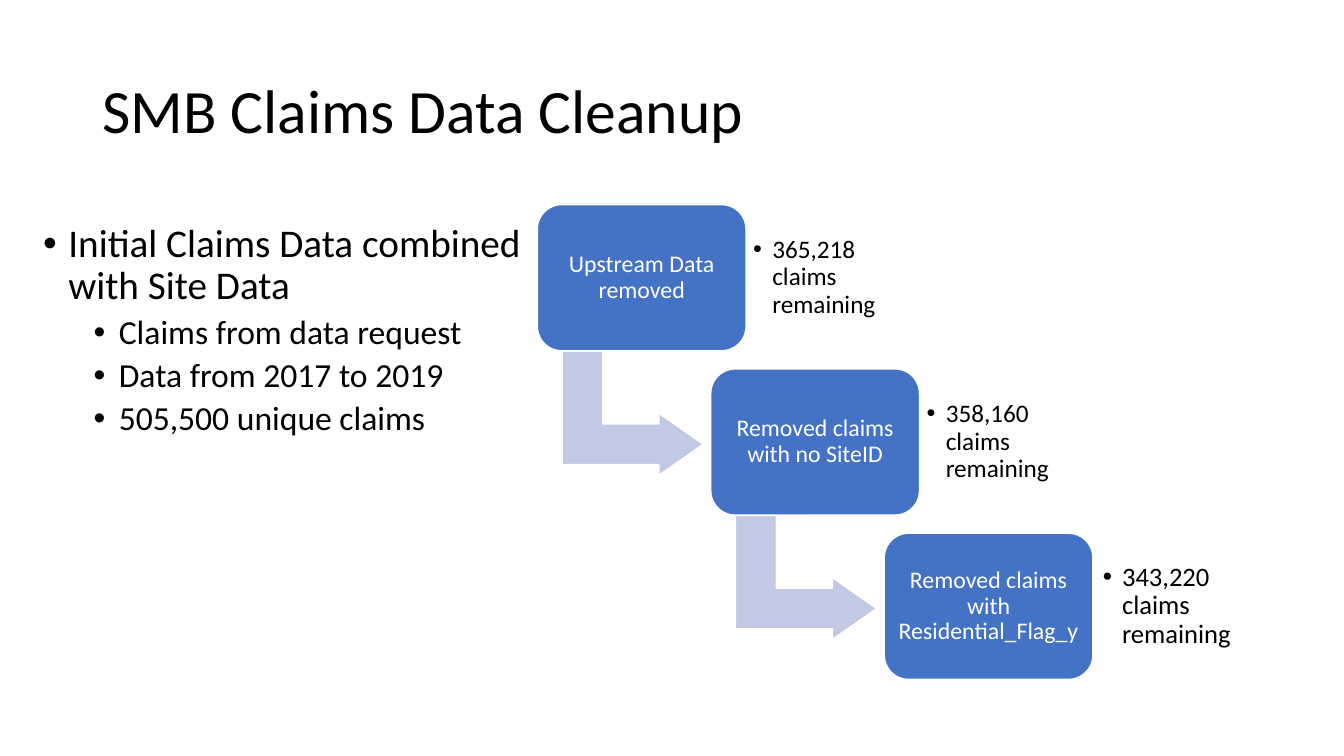
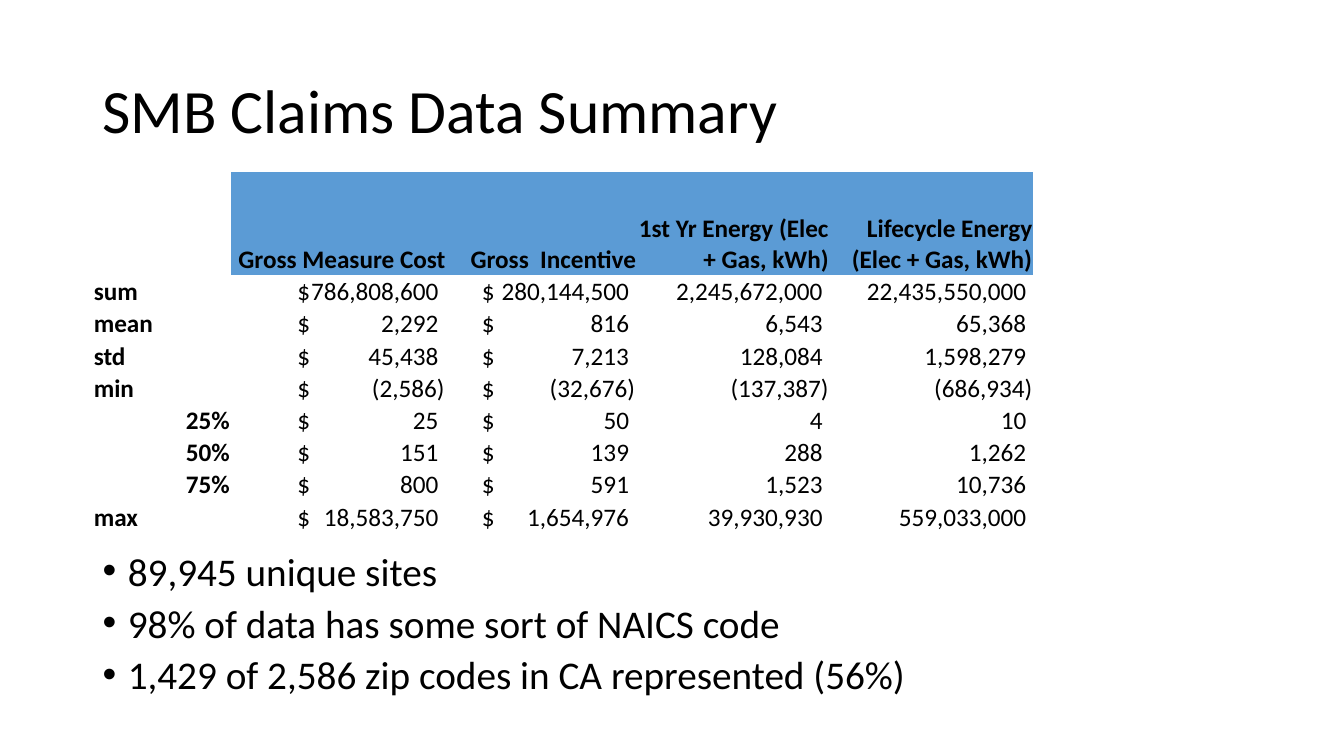
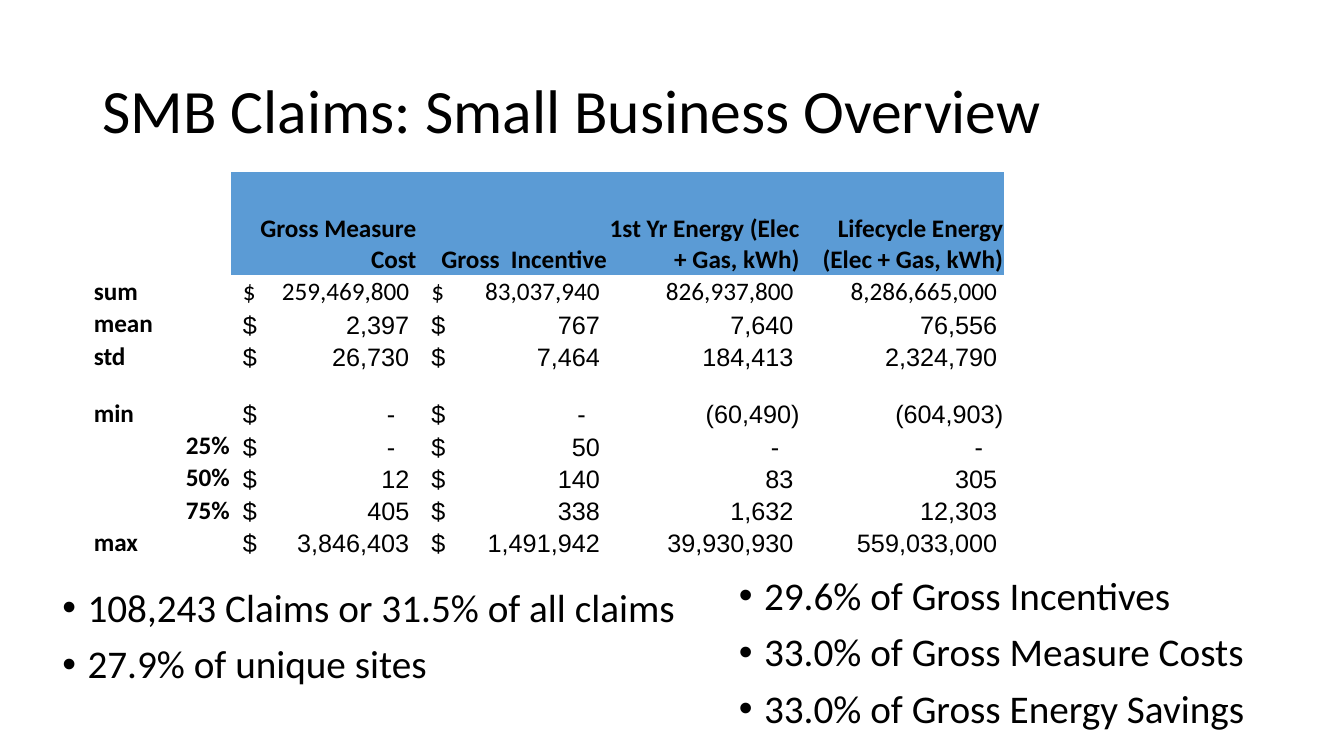
from lxml.etree import SubElement
from pptx import Presentation
from pptx.dml.color import RGBColor
from pptx.enum.shapes import MSO_SHAPE
from pptx.enum.text import MSO_ANCHOR, MSO_AUTO_SIZE, PP_ALIGN
from pptx.oxml.ns import qn
from pptx.util import Inches, Pt

BLACK = RGBColor(0x00, 0x00, 0x00)
WHITE = RGBColor(0xFF, 0xFF, 0xFF)
BLUE = RGBColor(0x44, 0x72, 0xC4)
PALE = RGBColor(0xC1, 0xC9, 0xE4)
HEAD = RGBColor(0x5B, 0x9B, 0xD5)
PLAIN = "{2D5ABB26-0587-4C30-8999-92F81FD0307C}"


def put(frame, text, size=18, face="Calibri", color=BLACK, bold=False,
        align=PP_ALIGN.LEFT, line=0.9, before=0, left=0, hang=0, tab=0):
    para = frame.paragraphs[0]
    if para.runs:
        para = frame.add_paragraph()
    para.alignment = align
    para.line_spacing = line
    para.space_before = Pt(before)
    props = para._p.get_or_add_pPr()
    if hang:
        props.set("marL", str(Inches(left)))
        props.set("indent", str(-Inches(hang)))
        SubElement(props, qn("a:buFont"), typeface="Arial")
        SubElement(props, qn("a:buChar"), char="•")
    if tab:
        stops = SubElement(props, qn("a:tabLst"))
        SubElement(stops, qn("a:tab"), pos=str(Inches(tab)), algn="r")
    run = para.add_run()
    run.text = text
    font = run.font
    font.name, font.size, font.bold = face, Pt(size), bold
    font.color.rgb = color


def box(slide, left, top, width, height, anchor=MSO_ANCHOR.TOP, pad=None):
    area = slide.shapes.add_textbox(Inches(left), Inches(top), Inches(width), Inches(height))
    frame = area.text_frame
    frame.word_wrap = True
    frame.auto_size = MSO_AUTO_SIZE.NONE
    frame.vertical_anchor = anchor
    if pad:
        frame.margin_left = frame.margin_right = Inches(pad)
        frame.margin_top = frame.margin_bottom = Inches(pad)
    return frame


deck = Presentation()
deck.slide_width, deck.slide_height = Inches(13.33), Inches(7.5)
slides = []
for title in ("SMB Claims Data Cleanup", "SMB Claims Data Summary",
              "SMB Claims: Small Business Overview"):
    slide = deck.slides.add_slide(deck.slide_layouts[6])
    put(box(slide, 0.92, 0.4, 11.5, 1.45, MSO_ANCHOR.MIDDLE), title, size=44)
    slides.append(slide)
clean, total, small = slides

intro = box(clean, 0.33, 2.17, 4.95, 4.76)
put(intro, "Initial Claims Data combined with Site Data",
    size=28, before=10, left=0.25, hang=0.25)
for text in ("Claims from data request", "Data from 2017 to 2019", "505,500 unique claims"):
    put(intro, text, size=24, before=5, left=0.75, hang=0.25)

steps = [
    ("Upstream Data removed", "365,218 claims remaining", 18, 0.07),
    ("Removed claims with no SiteID", "358,160 claims remaining", 18, 0.07),
    ("Removed claims with Residential_Flag_y", "343,220 claims remaining", 19, 0.1),
]
for i, (label, note, size, pad) in enumerate(steps):
    x, y = 5.33 + 1.72 * i, 2.03 + 1.63 * i
    parts = [(MSO_SHAPE.ROUNDED_RECTANGLE, x, y, 2.07, 1.45, BLUE, [0.167])]
    if i < len(steps) - 1:
        parts.insert(0, (MSO_SHAPE.BENT_UP_ARROW, x + 0.33, y + 1.37, 1.23, 1.4,
                         PALE, [0.328, 0.25, 0.358]))
    for kind, left, top, width, height, fill, bends in parts:
        shape = clean.shapes.add_shape(kind, Inches(left), Inches(top),
                                       Inches(width), Inches(height))
        shape.shadow.inherit = False
        shape.fill.solid()
        shape.fill.fore_color.rgb = fill
        shape.line.color.rgb = WHITE
        shape.line.width = Pt(1)
        for n, bend in enumerate(bends):
            shape.adjustments[n] = bend
        if kind == MSO_SHAPE.BENT_UP_ARROW:
            shape.rotation = 90
    frame = shape.text_frame
    frame.word_wrap = True
    frame.vertical_anchor = MSO_ANCHOR.MIDDLE
    frame.margin_left = frame.margin_right = Inches(0.06)
    put(frame, label, size=17, color=WHITE, align=PP_ALIGN.CENTER)
    put(box(clean, x + 2.07, y + 0.14, 1.51, 1.17, MSO_ANCHOR.MIDDLE, pad),
        note, size=size, left=0.19, hang=0.19)

heads = ["", "Gross Measure Cost", "Gross  Incentive",
         "1st Yr Energy (Elec + Gas, kWh)", "Lifecycle Energy (Elec + Gas, kWh)"]
sums = """sum 786,808,600 280,144,500 2,245,672,000 22,435,550,000
mean 2,292 816 6,543 65,368
std 45,438 7,213 128,084 1,598,279
min (2,586) (32,676) (137,387) (686,934)
25% 25 50 4 10
50% 151 139 288 1,262
75% 800 591 1,523 10,736
max 18,583,750 1,654,976 39,930,930 559,033,000"""
shares = """sum 259,469,800 83,037,940 826,937,800 8,286,665,000
mean 2,397 767 7,640 76,556
std 26,730 7,464 184,413 2,324,790
min - - (60,490) (604,903)
25% - 50 - -
50% 12 140 83 305
75% 405 338 1,632 12,303
max 3,846,403 1,491,942 39,930,930 559,033,000"""
tables = [
    (total, sums, 2.14, (0.66, 0.35), "Calibri", 0.32),
    (small, shares, 1.85, (0.12, 0.14), "Arial", 0.57),
]
for slide, data, cost, signs, face, low in tables:
    rows = [heads] + [row.split() for row in data.splitlines()]
    widths = [1.37, cost, 1.89, 1.91, 2.02]
    tall = [1.02] + [0.32] * 3 + [low] + [0.32] * 4
    grid = slide.shapes.add_table(len(rows), len(widths), Inches(0.92), Inches(1.71),
                                  Inches(sum(widths)), Inches(sum(tall))).table
    grid.first_row = grid.horz_banding = False
    grid._tbl.tblPr[0].text = PLAIN
    for c, width in enumerate(widths):
        grid.columns[c].width = Inches(width)
    for r, row in enumerate(rows):
        grid.rows[r].height = Inches(tall[r])
        for c, text in enumerate(row):
            cell = grid.cell(r, c)
            cell.vertical_anchor = MSO_ANCHOR.BOTTOM
            cell.margin_left = cell.margin_right = cell.margin_top = Inches(0.01)
            cell.margin_bottom = 0
            cell.fill.background()
            if not text:
                continue
            style = {"bold": r == 0 or c == 0, "line": 1, "align": PP_ALIGN.RIGHT}
            if r == 0:
                cell.fill.solid()
                cell.fill.fore_color.rgb = HEAD
            elif c == 0:
                if not text.endswith("%"):
                    style["align"] = PP_ALIGN.LEFT
            else:
                style["face"] = face if r > 1 else "Calibri"
                gap = {"-": 0.21, ")": 0.01}.get(text[-1], 0.07)
                if c < 3:
                    sign = signs[c - 1]
                    cell.margin_left = Inches(sign)
                    style["align"] = PP_ALIGN.LEFT
                    style["tab"] = widths[c] - sign - gap - 0.01
                    text = "$\t" + text
                else:
                    cell.margin_right = Inches(gap)
            put(cell.text_frame, text, **style)

lists = [
    (total, (0.92, 5.47, 11.76, 1.63), 0.8,
     ["89,945 unique sites", "98% of data has some sort of NAICS code",
      "1,429 of 2,586 zip codes in CA represented (56%)"]),
    (small, (0.52, 5.79, 11.5, 1.45), 0.9,
     ["108,243 Claims or 31.5% of all claims", "27.9% of unique sites"]),
    (small, (7.23, 5.67, 5.44, 1.9), 0.9,
     ["29.6% of Gross Incentives", "33.0% of Gross Measure Costs",
      "33.0% of Gross Energy Savings"]),
]
for slide, place, line, items in lists:
    frame = box(slide, *place)
    for text in items:
        put(frame, text, size=28, line=line, before=10, left=0.25, hang=0.25)

deck.save("out.pptx")
